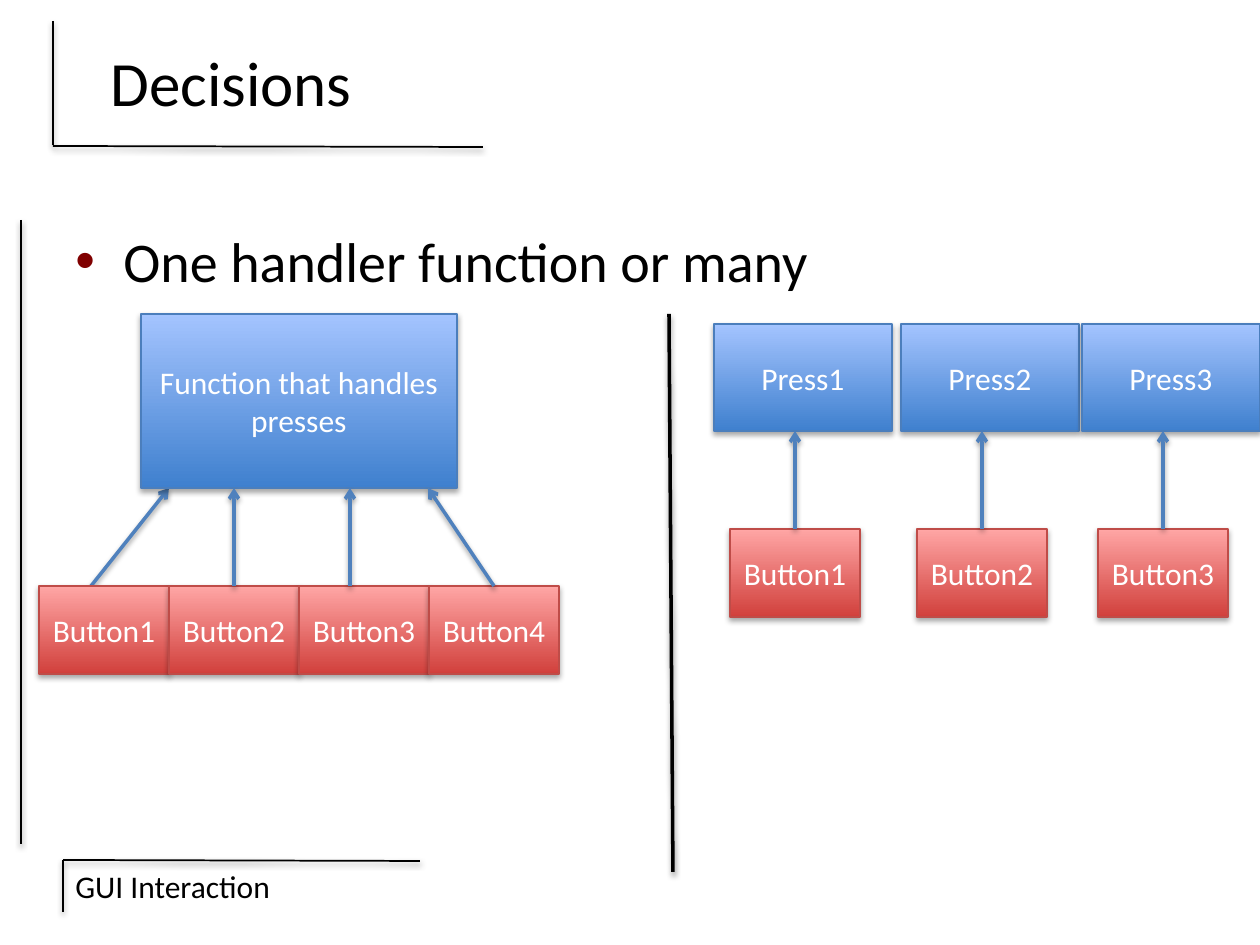
from lxml import etree
from pptx import Presentation
from pptx import util as u
from pptx.dml.color import RGBColor
from pptx.enum import shapes, text
from pptx.oxml import parse_xml
from pptx.oxml.ns import nsdecls, qn

SCALE = 914400 / 126  # EMU per px
hex_color = RGBColor.from_string
BLUE = {"top": "A4C4FF", "bottom": "3F80CE", "edge": "4B7EBC"}
RED = {"top": "FFA6A5", "bottom": "D1403C", "edge": "BF4C48"}
ARROW = "4F81BD"


def add_words(shape, lines, size, color, align, anchor):
    frame = shape.text_frame
    for name, value in {"word_wrap": True, "vertical_anchor": anchor}.items():
        setattr(frame, name, value)
    for index, line in enumerate(lines):
        para = frame.add_paragraph() if index else frame.paragraphs[0]
        para.alignment = align
        span = para.add_run()
        span.text = line
        for name, value in {"name": "Calibri", "size": u.Pt(size)}.items():
            setattr(span.font, name, value)
        span.font.color.rgb = hex_color(color)


def add_line(points, color, width, arrow=False):
    line = page.shapes.add_connector(
        shapes.MSO_CONNECTOR.STRAIGHT, *[round(p * SCALE) for p in points])
    line.line.color.rgb = hex_color(color)
    line.line.width = u.Pt(width)
    if arrow:
        outline = line.line._get_or_add_ln()
        etree.SubElement(outline, qn("a:tailEnd")).set("type", "arrow")
    return line


deck = Presentation()
deck.slide_width, deck.slide_height = round(1260 * SCALE), round(945 * SCALE)
page = deck.slides.add_slide(deck.slide_layouts[6])

# Frame rules around title, body and footer
for points in [(420, 861, 63, 860), (21, 220, 21, 844), (63, 860, 63, 912),
               (483, 147, 53, 146), (53, 21, 53, 145)]:
    add_line(points, "000000", 1)

# Footer, title and bullet text
LEFT, CENTER = text.PP_ALIGN.LEFT, text.PP_ALIGN.CENTER
TOP, MIDDLE = text.MSO_ANCHOR.TOP, text.MSO_ANCHOR.MIDDLE
for place, words, size, align, anchor in [
        ((63, 861, 305, 50), "GUI Interaction", 18, LEFT, TOP),
        ((63, 21, 336, 120), "Decisions", 36, CENTER, MIDDLE),
        ((63, 220, 1134, 624), "One handler function or many", 32, LEFT, TOP)]:
    box = page.shapes.add_textbox(*[round(p * SCALE) for p in place])
    add_words(box, [words], size, "000000", align, anchor)

# Bullet on the last text
para = box.text_frame.paragraphs[0]
para.space_before = u.Pt(6.4)
props = para._p.get_or_add_pPr()
indent = round(48 * SCALE)
props.set("marL", str(indent))
props.set("indent", str(-indent))
for bullet in ['<a:buClr {}><a:srgbClr val="800000"/></a:buClr>',
               '<a:buFont {} typeface="Arial"/>', '<a:buChar {} char="•"/>']:
    props.append(parse_xml(bullet.format(nsdecls("a"))))

# First arrow lies behind the boxes
add_line((91, 586, 169, 488), ARROW, 2, arrow=True)

# Boxes: one handler on the left, three on the right
presses = [714, 901, 1082]
boxes = [((141, 314, 316, 174), BLUE, ["Function that handles", "presses"])]
boxes += [((39 + 130 * i, 586, 130, 88), RED, [f"Button{i + 1}"])
          for i in range(4)]
for number, left in enumerate(presses, 1):
    boxes += [((left, 324, 178, 107), BLUE, [f"Press{number}"]),
              ((left + 16, 529, 130, 88), RED, [f"Button{number}"])]
buttons = []
for place, colors, lines in boxes:
    box = page.shapes.add_shape(shapes.MSO_SHAPE.RECTANGLE,
                                *[round(p * SCALE) for p in place])
    box.fill.gradient()
    box.fill.gradient_angle = 90
    for stop, part in zip(box.fill.gradient_stops, ("bottom", "top")):
        stop.color.rgb = hex_color(colors[part])
    box.line.color.rgb = hex_color(colors["edge"])
    box.line.width = u.Pt(0.75)
    add_words(box, lines, 18, "FFFFFF", CENTER, MIDDLE)
    if colors is RED:
        buttons.append(box)

# Arrows from buttons to handlers; None means not from the button's middle
arrows = [((234, 586, 234, 488), buttons[1]), ((350, 586, 350, 488), None),
          ((494, 586, 428, 488), buttons[3])]
arrows += [((left + 81, 529, left + 81, 431), button)
           for left, button in zip(presses, buttons[4:])]
for points, button in arrows:
    arrow = add_line(points, ARROW, 2, arrow=True)
    if button is not None:
        arrow.begin_connect(button, 0)

# Divider between the two designs
add_line((669, 314, 673, 872), "000000", 2)

# Soft shadow below every line and box
for shape in page.shapes:
    if shape.shape_type == shapes.MSO_SHAPE_TYPE.TEXT_BOX:
        continue
    is_line = shape.shape_type == shapes.MSO_SHAPE_TYPE.LINE
    distance, alpha = (20000, 38000) if is_line else (23000, 35000)
    shape._element.spPr.append(parse_xml(
        f'<a:effectLst {nsdecls("a")}><a:outerShdw blurRad="40000" '
        f'dist="{distance}" dir="5400000" rotWithShape="0">'
        f'<a:srgbClr val="000000"><a:alpha val="{alpha}"/></a:srgbClr>'
        '</a:outerShdw></a:effectLst>'))

deck.save("out.pptx")
